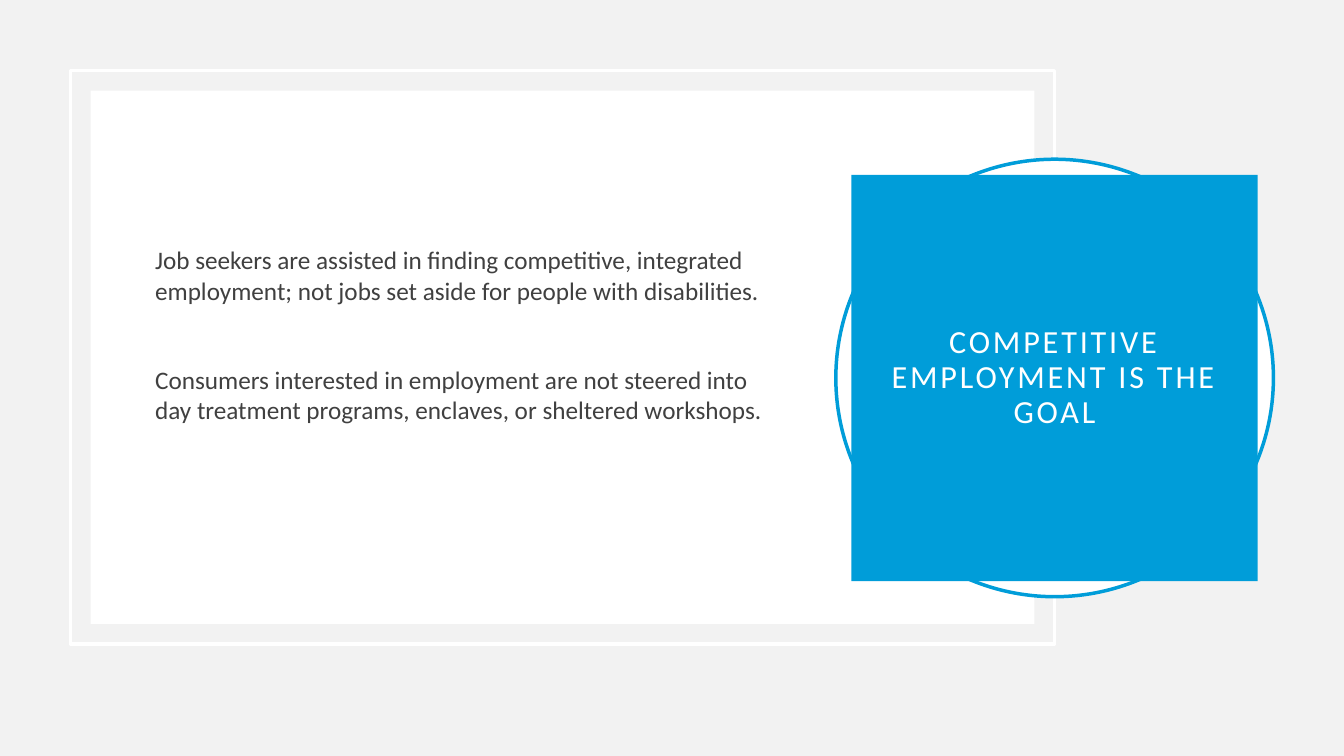
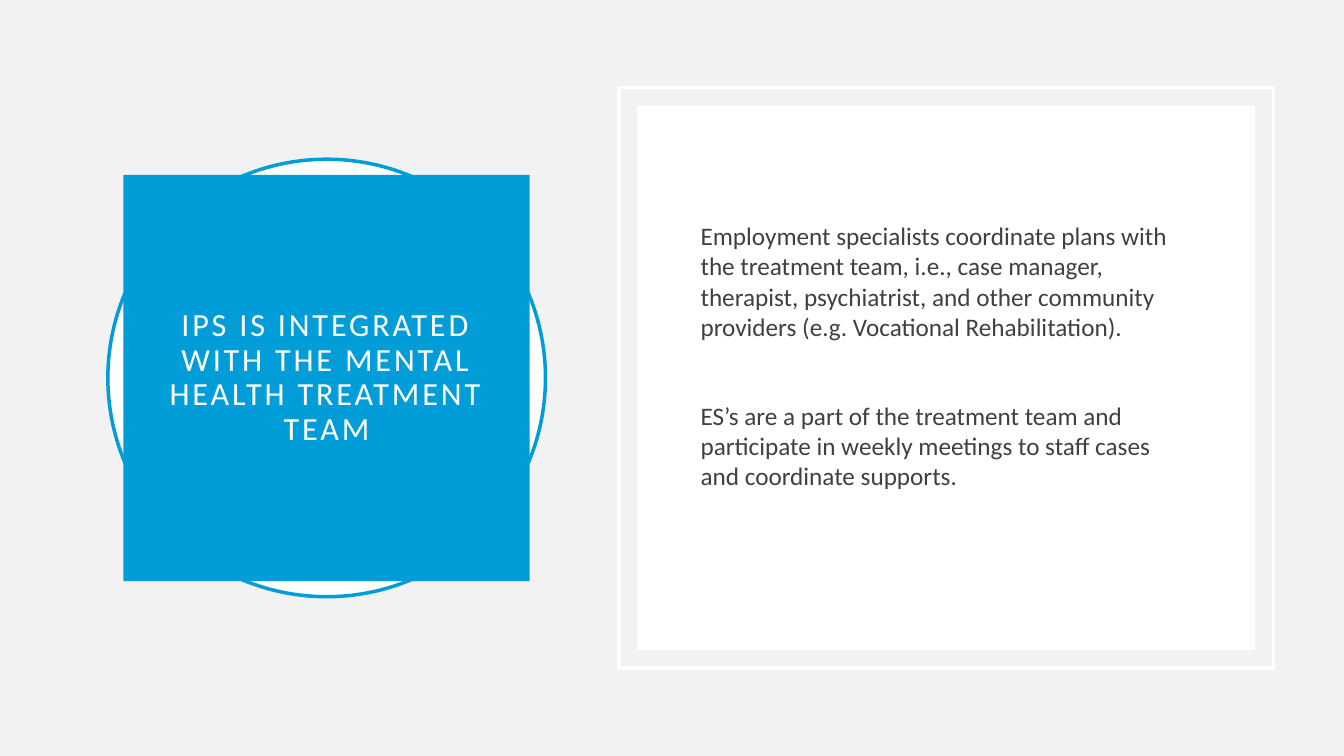
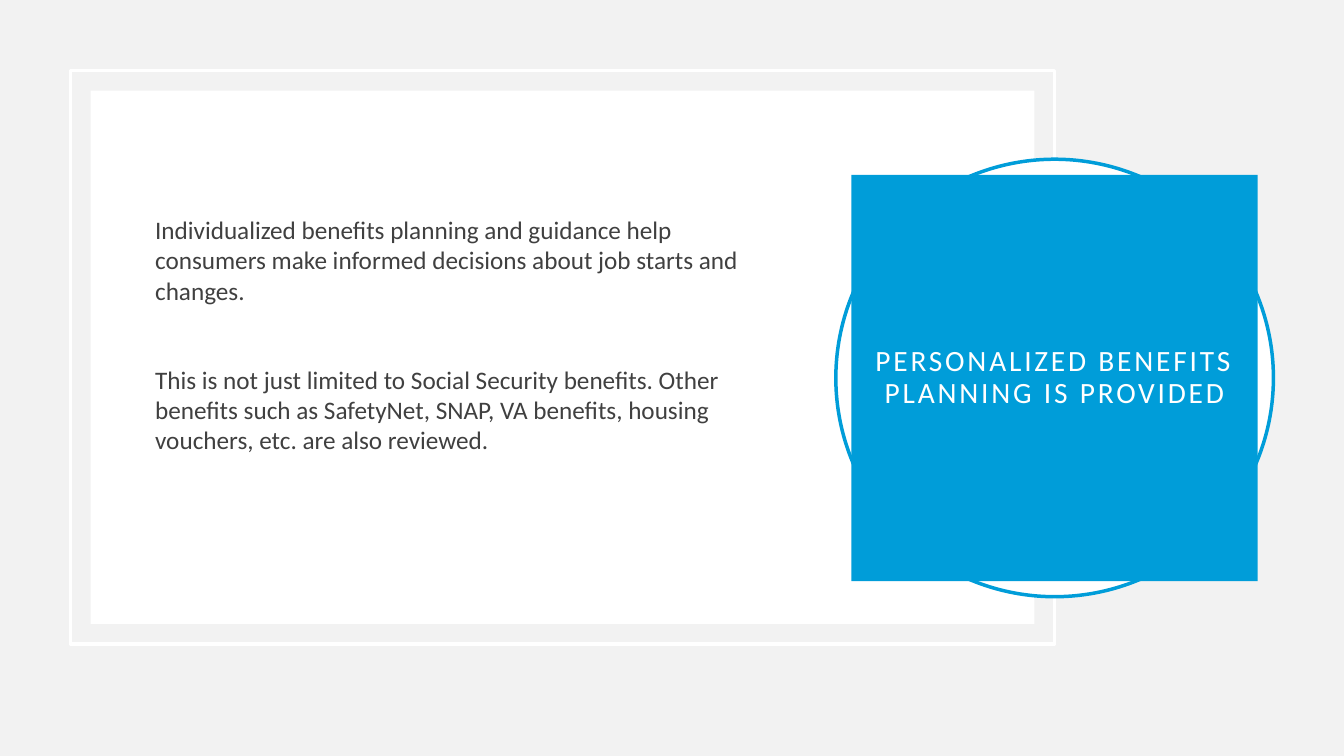
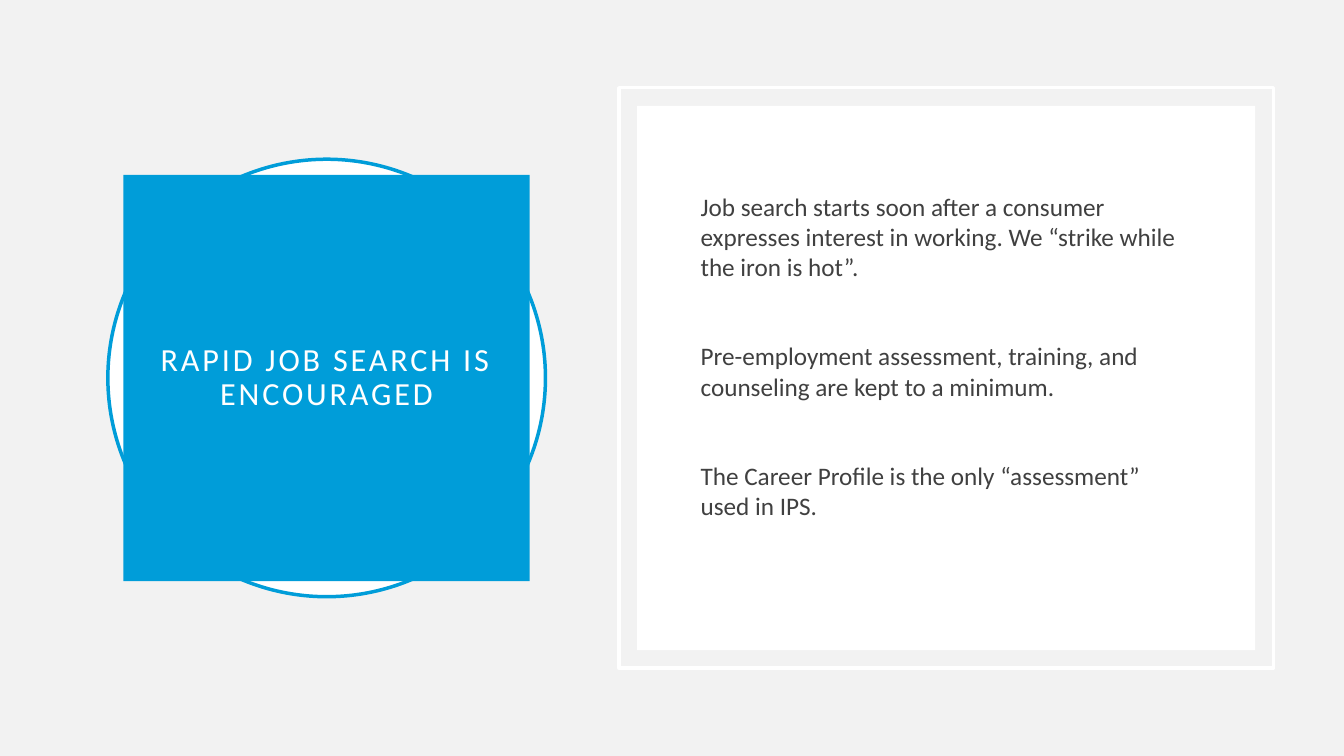
from pptx import Presentation
from pptx.dml.color import RGBColor
from pptx.enum.shapes import MSO_SHAPE as SHAPE
from pptx.enum.text import MSO_ANCHOR as ANCHOR, PP_ALIGN as ALIGN
from pptx.util import Inches, Pt

FONT = "Calibri"
BLUE, WHITE, GREY, INK = "009DD9", "FFFFFF", "F2F2F2", "404040"
BADGE_TOP, BADGE_SIZE, SQUARE_SIZE = 1.58, 4.34, 4.03

BADGE_RIGHT = dict(badge_left=8.29, frame=(0.7, 0.7, 9.76, 5.69), inset=0.2,
                   body=(1.44, 1.4, 6.25, 4.28))
BADGE_LEFT = dict(badge_left=1.07, frame=(6.14, 0.87, 6.49, 5.76), inset=0.18,
                  body=(6.85, 1.58, 5.09, 4.34))

SLIDES = [
    (BADGE_RIGHT, "COMPETITIVE EMPLOYMENT IS THE GOAL", 23, [
        "Job seekers are assisted in finding competitive, integrated employment; "
        "not jobs set aside for people with disabilities.",
        "Consumers interested in employment are not steered into day treatment "
        "programs, enclaves, or sheltered workshops."]),
    (BADGE_LEFT, "IPS IS INTEGRATED WITH THE MENTAL HEALTH TREATMENT TEAM", 23, [
        "Employment specialists coordinate plans with the treatment team, i.e., "
        "case manager, therapist, psychiatrist, and other community providers "
        "(e.g. Vocational Rehabilitation).",
        "ES’s are a part of the treatment team and participate in weekly meetings "
        "to staff cases and coordinate supports."]),
    (BADGE_RIGHT, "PERSONALIZED BENEFITS PLANNING IS PROVIDED", 21, [
        "Individualized benefits planning and guidance help consumers make "
        "informed decisions about job starts and changes.",
        "This is not just limited to Social Security benefits. Other benefits such "
        "as SafetyNet, SNAP, VA benefits, housing vouchers, etc. are also reviewed."]),
    (BADGE_LEFT, "RAPID JOB SEARCH IS ENCOURAGED", 23, [
        "Job search starts soon after a consumer expresses interest in working. "
        "We “strike while the iron is hot”.",
        "Pre-employment assessment, training, and counseling are kept to a minimum.",
        "The Career Profile is the only “assessment” used in IPS."]),
]


def paint(target, color):
    """Give a fill or a font a solid hex colour."""
    if hasattr(target, "solid"):
        target.solid()
        target.fore_color.rgb = RGBColor.from_string(color)
    else:
        target.color.rgb = RGBColor.from_string(color)


def inner(box, inset):
    """Return the box shrunk by the inset on every side."""
    x, y, w, h = box
    return x + inset, y + inset, w - 2 * inset, h - 2 * inset


def add_box(s, kind, box, fill=None, line=None):
    """Add a flat shape with an optional fill and outline."""
    sp = s.shapes.add_shape(kind, *map(Inches, box))
    sp.shadow.inherit = False
    if fill:
        paint(sp.fill, fill)
    else:
        sp.fill.background()
    if line:
        paint(sp.line.fill, line)
        sp.line.width = Pt(2.5)
    else:
        sp.line.fill.background()
    return sp


def style(p, size, color):
    """Set the font of a paragraph."""
    p.font.name, p.font.size = FONT, Pt(size)
    paint(p.font, color)


def add_panel(s, frame, inset):
    """Add the white panel inside its thin white frame."""
    add_box(s, SHAPE.RECTANGLE, frame, line=WHITE)
    add_box(s, SHAPE.RECTANGLE, inner(frame, inset), fill=WHITE)


def add_body(s, box, texts):
    """Add the widely spaced paragraphs of the panel."""
    tf = s.shapes.add_textbox(*map(Inches, box)).text_frame
    tf.word_wrap = True
    tf.vertical_anchor = ANCHOR.MIDDLE
    tf.margin_bottom = Inches(0.49)
    tf.text = "\n".join(texts)
    for i, p in enumerate(tf.paragraphs):
        p.space_before = Pt(42 if i else 10)
        style(p, 18, INK)


def add_badge(s, left, title, size):
    """Add the title square over its ring."""
    ring = left, BADGE_TOP, BADGE_SIZE, BADGE_SIZE
    add_box(s, SHAPE.OVAL, ring, fill=WHITE, line=BLUE)
    square = inner(ring, (BADGE_SIZE - SQUARE_SIZE) / 2)
    tf = add_box(s, SHAPE.RECTANGLE, square, fill=BLUE).text_frame
    tf.word_wrap = True
    tf.vertical_anchor = ANCHOR.MIDDLE
    tf.margin_left = tf.margin_right = tf.margin_top = tf.margin_bottom = Inches(0.2)
    tf.text = title
    p = tf.paragraphs[0]
    p.alignment = ALIGN.CENTER
    p.line_spacing = 0.9
    style(p, size, WHITE)
    p.runs[0]._r.get_or_add_rPr().set("spc", "200")


def add_principle(prs, layout, title, size, texts):
    """Add one slide: panel, body text and title badge."""
    s = prs.slides.add_slide(prs.slide_layouts[6])
    add_panel(s, layout["frame"], layout["inset"])
    add_body(s, layout["body"], texts)
    add_badge(s, layout["badge_left"], title, size)


def main():
    """Build and save the presentation."""
    prs = Presentation()
    prs.slide_width, prs.slide_height = Inches(13.33), Inches(7.5)
    paint(prs.slide_master.background.fill, GREY)
    for slide in SLIDES:
        add_principle(prs, *slide)
    prs.save("out.pptx")


if __name__ == "__main__":
    main()
